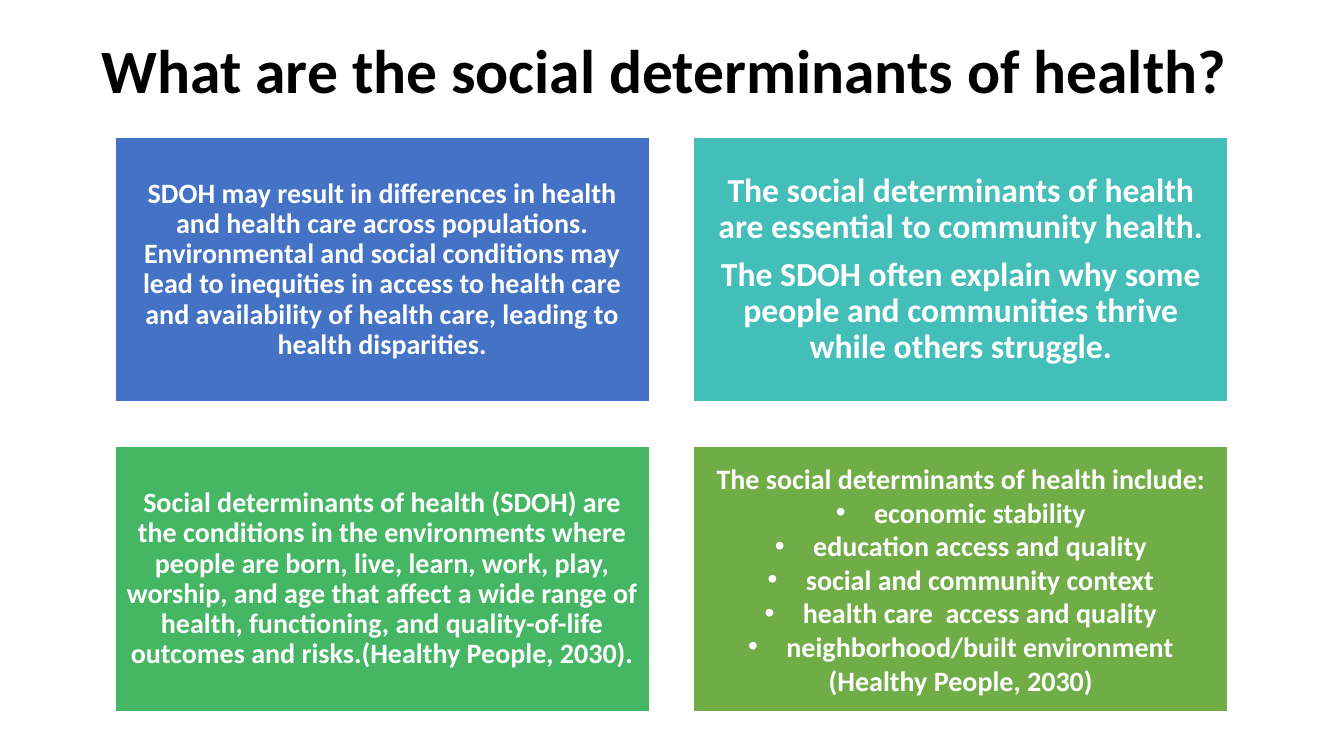
from lxml import etree
from pptx import Presentation
from pptx import util as u
from pptx.dml.color import RGBColor
from pptx.enum import shapes, text
from pptx.oxml.ns import qn

hues = {
    "ink": "000000",
    "white": "FFFFFF",
    "blue": "4472C4",
    "teal": "43BEB9",
    "green": "45B664",
    "olive": "70AD47",
}


def write(frame, lines, size, color="white", align="CENTER", space=0.9, after=0, inset=0.08, marks=()):
    frame.word_wrap = True
    frame.vertical_anchor = text.MSO_ANCHOR.MIDDLE
    frame.margin_left = frame.margin_right = u.Inches(inset)
    frame.margin_top = frame.margin_bottom = u.Inches(inset)
    for i, line in enumerate(lines):
        para = frame.paragraphs[0] if i == 0 else frame.add_paragraph()
        para.alignment = text.PP_ALIGN[align]
        para.line_spacing = space
        para.space_after = u.Pt(after)
        if i in marks:
            props = para._p.get_or_add_pPr()
            props.set("marL", str(u.Inches(0.38)))
            props.set("indent", str(u.Inches(-0.38)))
            etree.SubElement(props, qn("a:buFont")).set("typeface", "Arial")
            etree.SubElement(props, qn("a:buChar")).set("char", "•")
        run = para.add_run()
        run.text = line
        run.font.name = "Calibri"
        run.font.size = u.Pt(size)
        run.font.bold = True
        run.font.color.rgb = RGBColor.from_string(hues[color])


deck = Presentation()
deck.slide_width = u.Inches(13.33)
deck.slide_height = u.Inches(7.5)
slide = deck.slides.add_slide(deck.slide_layouts[6])

title = slide.shapes.add_textbox(u.Inches(0.91), 0, u.Inches(11.5), u.Inches(1.45))
write(title.text_frame, ["What are the social determinants of health?"], 44,
      color="ink", align="LEFT", inset=0.1)

cards = [
    ("blue", ["SDOH may result in differences in health and health care across populations. "
              "Environmental and social conditions may lead to inequities in access to health care "
              "and availability of health care, leading to health disparities."],
     dict(size=20, after=7)),
    ("teal", ["The social determinants of health are essential to community health.",
              "The SDOH often explain why some people and communities thrive while others struggle."],
     dict(size=24, after=8.4)),
    ("green", ["Social determinants of health (SDOH) are the conditions in the environments where "
               "people are born, live, learn, work, play, worship, and age that affect a wide range of "
               "health, functioning, and quality-of-life outcomes and risks.(Healthy People, 2030)."],
     dict(size=20, after=7)),
    ("olive", ["The social determinants of health include:",
               "economic stability",
               "education access and quality",
               "social and community context",
               "health care  access and quality",
               "neighborhood/built environment",
               "(Healthy People, 2030)"],
     dict(size=20, space=1, marks=range(1, 6))),
]

wide, high, gap = 5.3, 2.63, 0.44
for i, (hue, lines, style) in enumerate(cards):
    row, col = divmod(i, 2)
    card = slide.shapes.add_shape(
        shapes.MSO_SHAPE.RECTANGLE,
        u.Inches(1.14 + col * (wide + gap)), u.Inches(1.36 + row * (high + gap)),
        u.Inches(wide), u.Inches(high))
    card.shadow.inherit = False
    card.fill.solid()
    card.fill.fore_color.rgb = RGBColor.from_string(hues[hue])
    card.line.color.rgb = RGBColor.from_string(hues["white"])
    card.line.width = u.Pt(1)
    write(card.text_frame, lines, **style)

deck.save("out.pptx")
